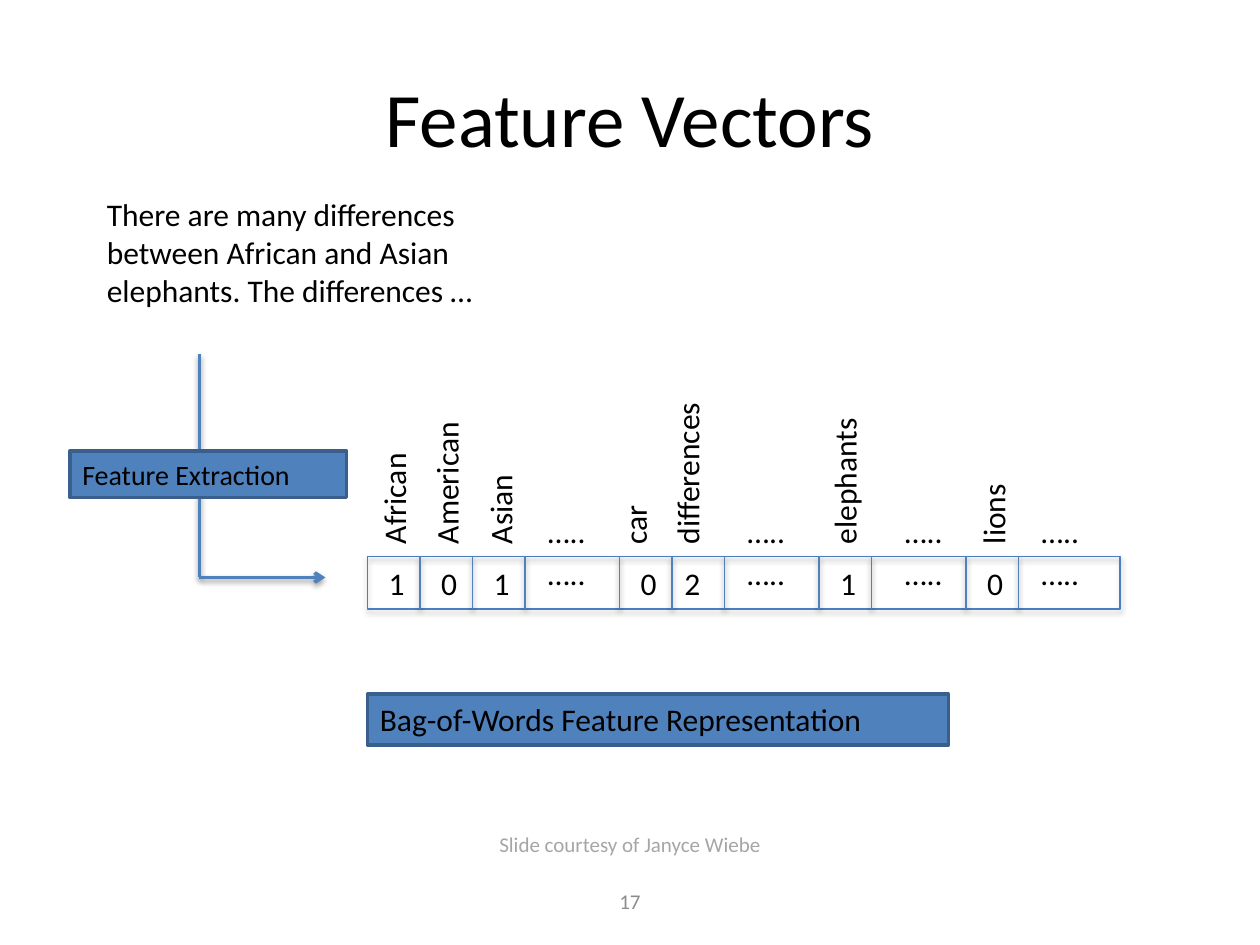
"""Build the Feature Vectors slide: a sentence turned into a bag-of-words vector."""
from lxml import etree
from pptx import Presentation
from pptx.dml.color import RGBColor
from pptx.enum.shapes import MSO_CONNECTOR, MSO_SHAPE
from pptx.enum.text import MSO_ANCHOR, PP_ALIGN
from pptx.oxml import parse_xml
from pptx.util import Pt

RECTANGLE = MSO_SHAPE.RECTANGLE
STRAIGHT = MSO_CONNECTOR.STRAIGHT
TOP, MIDDLE = MSO_ANCHOR.TOP, MSO_ANCHOR.MIDDLE
LEFT, CENTER = PP_ALIGN.LEFT, PP_ALIGN.CENTER
color = RGBColor.from_string
NS = "http://schemas.openxmlformats.org/drawingml/2006/main"
SHADOW = (f'<a:effectLst xmlns:a="{NS}"><a:outerShdw blurRad="40000" dist="21600" dir="5400000" '
          'rotWithShape="0"><a:srgbClr val="000000"><a:alpha val="37000"/></a:srgbClr>'
          '</a:outerShdw></a:effectLst>')


def write(box, text, size=18, ink="000000", align=LEFT, anchor=TOP, wrap=True):
    frame = box.text_frame
    for name, value in {"word_wrap": wrap, "vertical_anchor": anchor}.items():
        setattr(frame, name, value)
    para = frame.paragraphs[0]
    para.alignment = align
    span = para.add_run()
    span.text = text
    for name, value in {"name": "Calibri", "size": Pt(size)}.items():
        setattr(span.font, name, value)
    span.font.color.rgb = color(ink)


def draw_line(page, x1, y1, x2, y2, width):
    line = page.shapes.add_connector(STRAIGHT, Pt(x1), Pt(y1), Pt(x2), Pt(y2))
    line.line.color.rgb = color("4F81BD")
    line.line.width = Pt(width)
    line._element.spPr.append(parse_xml(SHADOW))
    return line


deck = Presentation()
deck.slide_width, deck.slide_height = Pt(720), Pt(540)
page = deck.slides.add_slide(deck.slide_layouts[5])

title = page.shapes.title
for name, value in {"left": 36, "top": 21.6, "width": 648, "height": 90}.items():
    setattr(title, name, Pt(value))
write(title, "Feature Vectors", 44, align=CENTER, anchor=MIDDLE)

sentence = page.shapes.add_textbox(Pt(54), Pt(108), Pt(252), Pt(94.3))
write(sentence, "There are many differences between African and Asian elephants. The differences …")

ROW_LEFT, ROW_TOP, ROW_WIDTH, ROW_HEIGHT = 210, 318, 430, 30
TEXT_HEIGHT, DIGIT_WIDTH = 29, 24.5
DOTS = "….."

vector = page.shapes.add_shape(RECTANGLE, Pt(ROW_LEFT), Pt(ROW_TOP), Pt(ROW_WIDTH), Pt(ROW_HEIGHT))
vector.fill.background()
vector.line.color.rgb = color("4B7EBC")
vector.line.width = Pt(0.75)
vector._element.spPr.append(parse_xml(SHADOW))

# word, value, cell width, word length, word shift, value indent
features = [
    ("African", "1", 30, 77, 0, 5),
    ("American", "0", 30, 96, 0, 5),
    ("Asian", "1", 30, 63.4, 0.8, 5),
    (DOTS, DOTS, 54, 54, 0, 6),
    ("car", "0", 30, 41, -6.4, 5),
    ("differences", "2", 30, 105.8, -6.4, 0),
    (DOTS, DOTS, 54, 54, 0, 6),
    ("elephants", "1", 30, 96.5, -0.6, 5),
    (DOTS, DOTS, 54, 54, 0, 12),
    ("lions", "0", 30, 54.7, 0.4, 5),
    (DOTS, DOTS, 58, 54, 0, 6),
]
cell_left = ROW_LEFT
for word, value, cell_width, length, shift, indent in features:
    if cell_left > ROW_LEFT:
        draw_line(page, cell_left, ROW_TOP, cell_left, ROW_TOP + ROW_HEIGHT, 1)
    if word == DOTS:
        for top in (289, 313):
            dots = page.shapes.add_textbox(Pt(cell_left + indent), Pt(top), Pt(length), Pt(TEXT_HEIGHT))
            write(dots, DOTS)
    else:
        middle = cell_left + cell_width / 2 + shift
        label = page.shapes.add_textbox(Pt(middle - length / 2), Pt(ROW_TOP - (length + TEXT_HEIGHT) / 2),
                                        Pt(length), Pt(TEXT_HEIGHT))
        label.rotation = 270
        write(label, word, wrap=False)
        digit = page.shapes.add_textbox(Pt(cell_left + indent), Pt(318.5), Pt(DIGIT_WIDTH), Pt(TEXT_HEIGHT))
        write(digit, value, wrap=False)
    cell_left += cell_width

draw_line(page, 114, 202.3, 114, 330, 2)
arrow = draw_line(page, 114, 330, 186, 330, 2)
etree.SubElement(arrow.line._get_or_add_ln(), f"{{{NS}}}tailEnd", type="arrow")

for text, size, left, top, width, height in [
    ("Feature Extraction", 16, 40, 257.8, 158, 26.6),
    ("Bag-of-Words Feature Representation", 18, 210, 396.7, 332, 29),
]:
    box = page.shapes.add_shape(RECTANGLE, Pt(left), Pt(top), Pt(width), Pt(height))
    box.shadow.inherit = False
    box.fill.solid()
    box.fill.fore_color.rgb = color("4F81BD")
    box.line.color.rgb = color("3A5F8C")
    box.line.width = Pt(2)
    write(box, text, size)

credit = page.shapes.add_textbox(Pt(0), Pt(471.6), Pt(720), Pt(21.6))
write(credit, "Slide courtesy of Janyce Wiebe", 12, "A6A6A6", CENTER)
number = page.shapes.add_textbox(Pt(246), Pt(500.5), Pt(228), Pt(28.8))
write(number, "17", 12, "8C8C8C", CENTER, MIDDLE)

deck.save("out.pptx")
